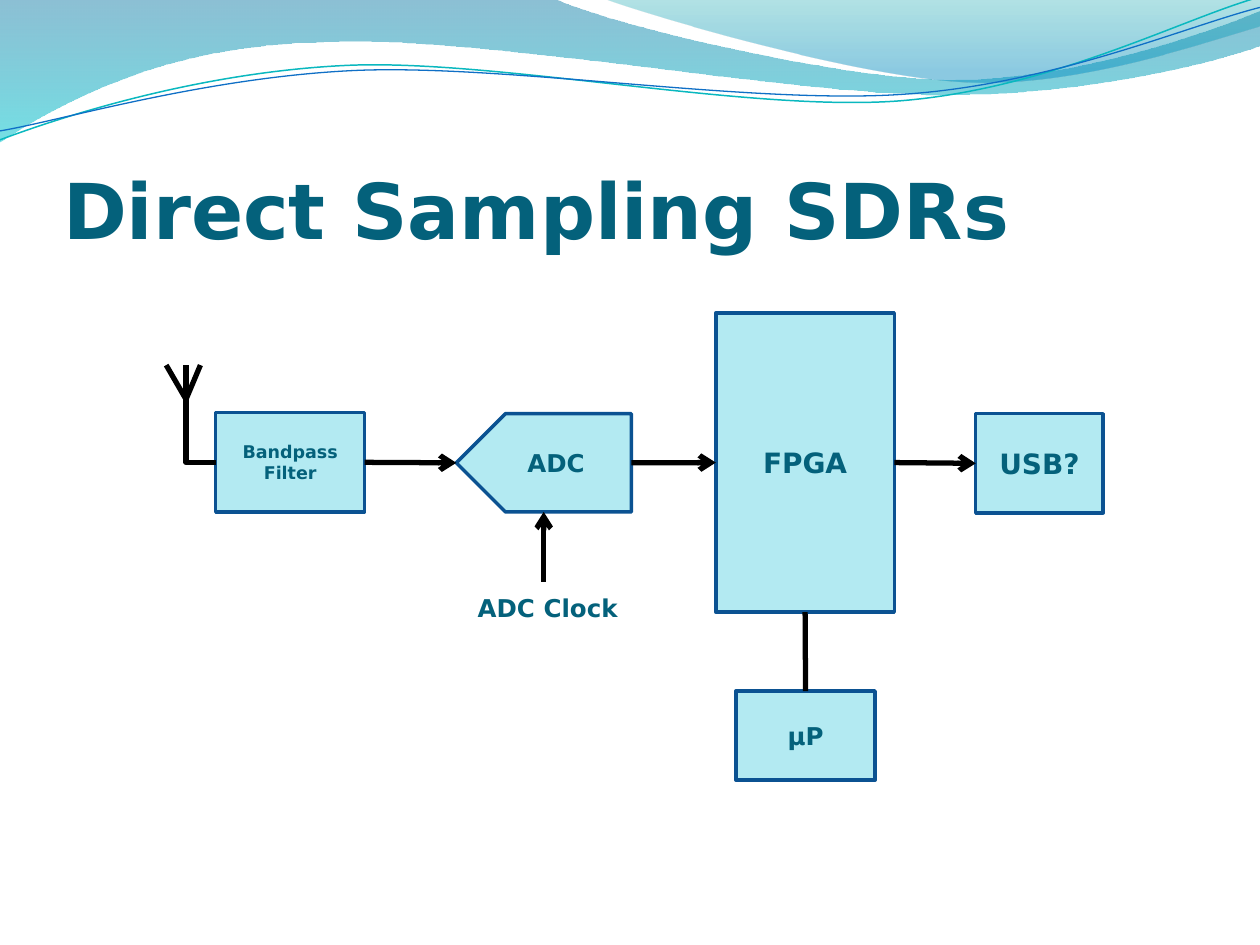
"""Build the block diagram slide of a direct sampling SDR."""
from dataclasses import dataclass
from typing import Optional

from lxml import etree
from pptx import Presentation
from pptx import util as u
from pptx.dml.color import RGBColor
from pptx.enum import shapes, text
from pptx.oxml.ns import qn

Point = tuple[float, float]
FONT = "DejaVu Sans"
TEAL = RGBColor(0x04, 0x61, 0x7B)
PALE = RGBColor(0xB3, 0xEA, 0xF2)
NAVY = RGBColor(0x0B, 0x52, 0x92)
BLACK = RGBColor(0, 0, 0)
WAVE_BLUE = RGBColor(0x00, 0x74, 0xA1)
WAVE_CYAN = RGBColor(0x00, 0xC6, 0xCF)
CREST_TEAL = RGBColor(0x00, 0xA1, 0xA9)
CREST_BLUE = RGBColor(0x00, 0x8B, 0xBF)
STRAND_TEAL = RGBColor(0x0A, 0xB8, 0xBF)
STRAND_BLUE = RGBColor(0x0F, 0x6F, 0xC6)
TOP, LEFT, BOTTOM, RIGHT = range(4)


@dataclass
class Stop:
    position: float
    color: RGBColor
    opacity: int


@dataclass
class Wave:
    start: Point
    segments: list[tuple[Point, ...]]
    stops: tuple[Stop, ...] = ()
    line_color: Optional[RGBColor] = None
    line_width: float = 0
    rotation: float = 0


@dataclass
class Block:
    label: str
    left: float
    top: float
    width: float
    height: float
    size: int
    pointed: bool = False


WAVES = [
    Wave((0, -0.02), [
        ((11.18, -0.02),),
        ((12.09, 0.43), (16.87, 1.6), (19.25, 1.6)),
        ((21.67, 1.6), (24.33, 0.66), (25.4, 0.23)),
        ((25.43, 0.91),),
        ((24.97, 1.12), (22.1, 1.93), (18.95, 1.91)),
        ((15.8, 1.9), (9.7, 0.71), (6.53, 0.86)),
        ((3.28, 0.89), (1.17, 2.11), (-0.02, 2.87)),
    ], stops=(Stop(0, WAVE_BLUE, 45), Stop(1, WAVE_CYAN, 55))),
    Wave((12.17, -0.02), [
        ((12.93, 0.28), (17.32, 1.57), (19.53, 1.65)),
        ((21.74, 1.75), (24.41, 0.81), (25.4, 0.53)),
        ((25.4, 0),),
    ], stops=(Stop(0, CREST_TEAL, 30), Stop(0.8, CREST_BLUE, 45))),
    Wave((-0.05, 2.22), [
        ((1.19, 1.82), (4.02, 1.04), (7.05, 1.05)),
        ((10.05, 1.07), (15.02, 2.37), (18.08, 2.29)),
        ((21.13, 2.2), (23.86, 0.91), (25.41, 0.55)),
    ], line_color=STRAND_TEAL, line_width=0.85, rotation=-2.7),
    Wave((-0.04, 2.04), [
        ((1.16, 1.9), (4.17, 1.15), (7.2, 1.16)),
        ((10.25, 1.18), (15.13, 2.23), (18.19, 2.16)),
        ((21.22, 2.1), (23.93, 1.06), (25.45, 0.75)),
    ], line_color=STRAND_BLUE, line_width=0.75, rotation=-2.7),
]
BLOCKS = [
    Block("Bandpass Filter", 4.35, 8.32, 3, 2, 10),
    Block("ADC", 9.2, 8.34, 3.53, 1.98, 14, pointed=True),
    Block("FPGA", 14.43, 6.31, 3.6, 6.03, 16),
    Block("USB?", 19.67, 8.34, 2.57, 2, 16),
    Block("μP", 14.84, 13.93, 2.8, 1.8, 14),
]
MIDDLE = 9.33
MAST, FORK, TIP = 3.75, 8.05, 7.36
CLOCK = 10.96


def bend_segments(shape, segments: list[tuple[Point, ...]]) -> None:
    """Turn each run of three lines into one cubic curve."""
    lines = iter(list(shape._element.spPr.iter(qn("a:lnTo"))))
    for segment in segments:
        first, *others = [next(lines) for _ in segment]
        if others:
            curve = etree.Element(qn("a:cubicBezTo"))
            first.addprevious(curve)
            for line in (first, *others):
                curve.append(line[0])
                line.getparent().remove(line)


def draw_wave(slide, wave: Wave) -> None:
    """Draw a gradient band or a thin strand."""
    builder = slide.shapes.build_freeform(*(u.Cm(v) for v in wave.start))
    builder.add_line_segments(
        [(u.Cm(x), u.Cm(y)) for segment in wave.segments for x, y in segment],
        close=bool(wave.stops))
    shape = builder.convert_to_shape()
    bend_segments(shape, wave.segments)
    shape.rotation = wave.rotation
    shape.shadow.inherit = False
    if not wave.stops:
        shape.fill.background()
        shape.line.color.rgb = wave.line_color
        shape.line.width = u.Pt(wave.line_width)
        return
    shape.line.fill.background()
    shape.fill.gradient()
    shape.fill.gradient_angle = 270
    for gradient_stop, stop in zip(shape.fill.gradient_stops, wave.stops):
        gradient_stop.position = stop.position
        gradient_stop.color.rgb = stop.color
    for color, stop in zip(shape._element.spPr.iter(qn("a:srgbClr")), wave.stops):
        etree.SubElement(color, qn("a:alpha"), val=str(stop.opacity * 1000))


def write(shape, content: str, size: int, alignment=text.PP_ALIGN.LEFT) -> None:
    """Put bold teal text into a shape."""
    shape.text_frame.text = content
    paragraph = shape.text_frame.paragraphs[0]
    paragraph.alignment = alignment
    font = paragraph.runs[0].font
    font.name, font.size, font.bold = FONT, u.Pt(size), True
    font.color.rgb = TEAL


def draw_block(slide, block: Block):
    """Draw one labelled block of the signal chain."""
    kinds = shapes.MSO_SHAPE
    shape = slide.shapes.add_shape(
        kinds.PENTAGON if block.pointed else kinds.RECTANGLE,
        u.Cm(block.left), u.Cm(block.top), u.Cm(block.width), u.Cm(block.height))
    if block.pointed:
        shape._element.spPr.xfrm.set("flipH", "1")
    shape.shadow.inherit = False
    shape.fill.solid()
    shape.fill.fore_color.rgb = PALE
    shape.line.color.rgb = NAVY
    shape.line.width = u.Pt(2)
    shape.text_frame.vertical_anchor = text.MSO_ANCHOR.MIDDLE
    write(shape, block.label, block.size, text.PP_ALIGN.CENTER)
    return shape


def draw_wire(slide, start: Point, end: Point, begin=None, finish=None,
              arrow: bool = False, bent: bool = False) -> None:
    """Draw a wire, joined to (shape, side) pairs where given."""
    kinds = shapes.MSO_CONNECTOR
    wire = slide.shapes.add_connector(
        kinds.ELBOW if bent else kinds.STRAIGHT, *(u.Cm(v) for v in (*start, *end)))
    if begin:
        wire.begin_connect(*begin)
    if finish:
        wire.end_connect(*finish)
    wire.line.color.rgb = BLACK
    wire.line.width = u.Pt(3)
    properties = wire._element.spPr
    if bent:
        properties.find(qn("a:prstGeom")).set("prst", "bentConnector2")
    if arrow:
        etree.SubElement(properties.find(qn("a:ln")), qn("a:tailEnd"), type="arrow")
    etree.SubElement(properties, qn("a:effectLst"))


def main() -> None:
    """Assemble and save the slide."""
    presentation = Presentation()
    presentation.slide_width, presentation.slide_height = u.Cm(25.4), u.Cm(19.05)
    slide = presentation.slides.add_slide(presentation.slide_layouts[5])
    for wave in WAVES:
        draw_wave(slide, wave)

    title = slide.shapes.title
    slide.shapes._spTree.append(title._element)
    title.left, title.top, title.width, title.height = (
        u.Cm(v) for v in (1.27, 1.96, 23.06, 3.18))
    frame = title.text_frame
    frame.auto_size = text.MSO_AUTO_SIZE.NONE
    frame.vertical_anchor = text.MSO_ANCHOR.BOTTOM
    frame.margin_left = frame.margin_right = frame.margin_bottom = 0
    write(title, "Direct Sampling SDRs", 44)

    bandpass, adc, fpga, usb, processor = [draw_block(slide, b) for b in BLOCKS]
    draw_wire(slide, (4.35, MIDDLE), (MAST, TIP), begin=(bandpass, LEFT), bent=True)
    for tip in (3.35, 4.04):
        draw_wire(slide, (MAST, FORK), (tip, TIP))
    draw_wire(slide, (7.35, MIDDLE), (9.2, MIDDLE), begin=(bandpass, RIGHT), arrow=True)
    draw_wire(slide, (12.73, MIDDLE), (14.43, MIDDLE), finish=(fpga, LEFT), arrow=True)
    draw_wire(slide, (18.03, MIDDLE), (19.67, MIDDLE), (fpga, RIGHT), (usb, LEFT), arrow=True)
    draw_wire(slide, (16.24, 13.93), (16.24, 12.34), (processor, TOP), (fpga, BOTTOM))
    draw_wire(slide, (CLOCK, 11.73), (CLOCK, 10.32), arrow=True)

    label = slide.shapes.add_textbox(u.Cm(9.38), u.Cm(11.84), u.Cm(3.35), u.Cm(0.86))
    label.text_frame.auto_size = text.MSO_AUTO_SIZE.SHAPE_TO_FIT_TEXT
    label.text_frame.word_wrap = False
    write(label, "ADC Clock", 14)
    presentation.save("out.pptx")


if __name__ == "__main__":
    main()
